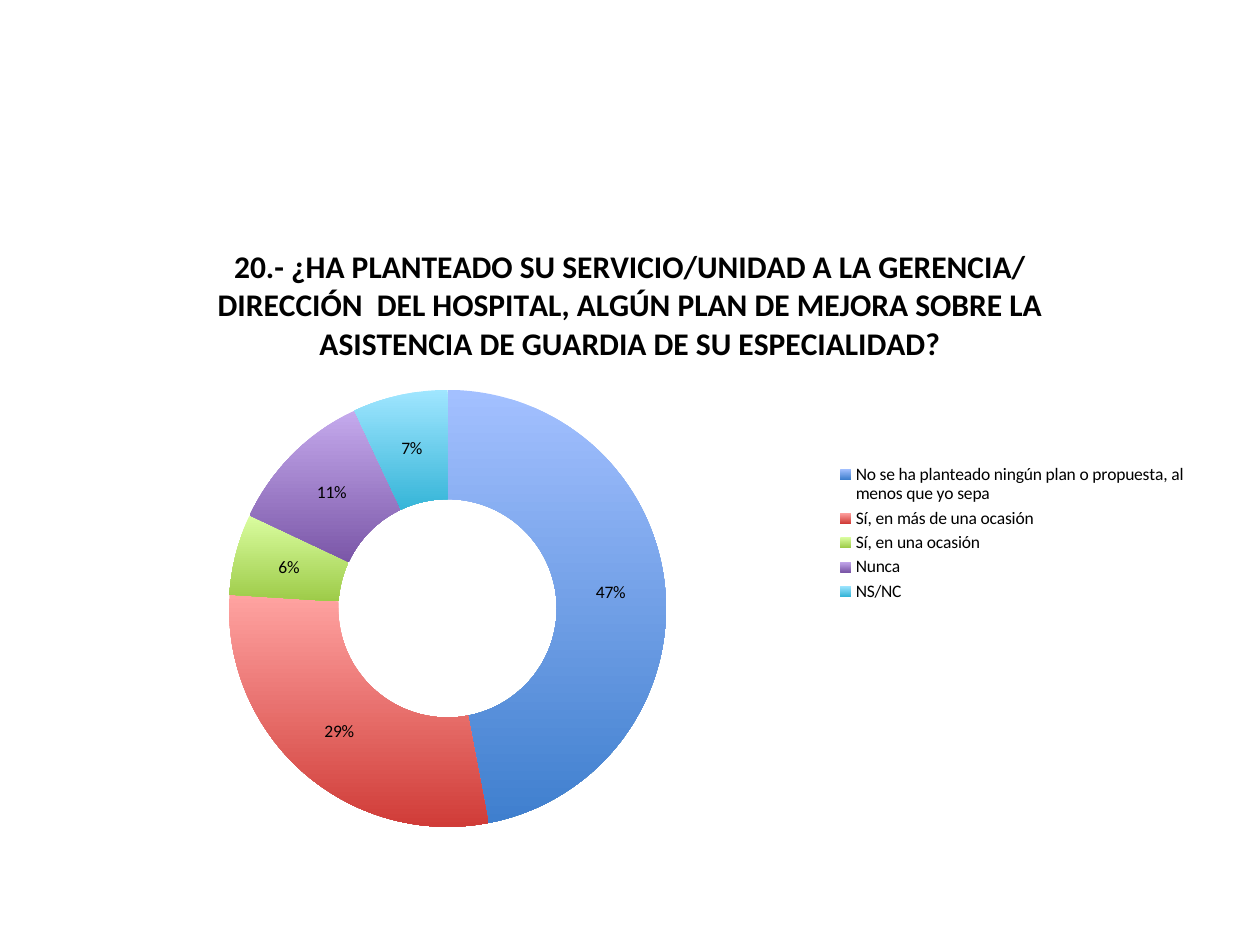
import pptx
import pptx.util
import pptx.dml.color
import pptx.chart.data
import pptx.enum.chart
import pptx.oxml
import pptx.oxml.ns

QUESTION = (
    "20.- ¿HA PLANTEADO SU SERVICIO/UNIDAD A LA GERENCIA/DIRECCIÓN  DEL HOSPITAL, "
    "ALGÚN PLAN DE MEJORA SOBRE LA ASISTENCIA DE GUARDIA DE SU ESPECIALIDAD?"
)
ANSWERS = [
    ("No se ha planteado ningún plan o propuesta, al menos que yo sepa", 47, ("A3C0FF", "3F7FCE")),
    ("Sí, en más de una ocasión", 29, ("FFA3A1", "D03C38")),
    ("Sí, en una ocasión", 6, ("DAFDA0", "9DCB48")),
    ("Nunca", 11, ("C5AAED", "7B57A8")),
    ("NS/NC", 7, ("A0E6FF", "36B5D8")),
]
THEME = {"font": "Calibri", "text": "000000", "title_size": 18, "text_size": 10}

PX = 914400 // 126
SLIDE = (1260, 945)
CHART = (63, 220, 1134, 624)
RING = (229, 390, 437, 437)
LEGEND = (832, 460, 360, 146)


def color(value):
    return pptx.dml.color.RGBColor.from_string(value)


def style(font, size, bold=False):
    font.name = THEME["font"]
    font.size = pptx.util.Pt(size)
    font.bold = bold
    font.color.rgb = color(THEME["text"])


def layout_element(box, inner=False):
    left, top, width, height = box
    fractions = {
        "x": (left - CHART[0]) / CHART[2],
        "y": (top - CHART[1]) / CHART[3],
        "w": width / CHART[2],
        "h": height / CHART[3],
    }
    target = '<c:layoutTarget val="inner"/>' if inner else ""
    modes = '<c:xMode val="edge"/><c:yMode val="edge"/>'
    sizes = "".join(f'<c:{key} val="{value:.4f}"/>' for key, value in fractions.items())
    return pptx.oxml.parse_xml(
        f'<c:layout {pptx.oxml.ns.nsdecls("c")}>'
        f"<c:manualLayout>{target}{modes}{sizes}</c:manualLayout></c:layout>"
    )


def place(parent, layout, position):
    for existing in parent.findall(pptx.oxml.ns.qn("c:layout")):
        parent.remove(existing)
    parent.insert(position, layout)


def main():
    presentation = pptx.Presentation()
    presentation.slide_width, presentation.slide_height = (side * PX for side in SLIDE)
    slide = presentation.slides.add_slide(presentation.slide_layouts[6])

    data = pptx.chart.data.CategoryChartData()
    data.categories = [answer for answer, _, _ in ANSWERS]
    data.add_series(QUESTION, [share for _, share, _ in ANSWERS])
    chart = slide.shapes.add_chart(
        pptx.enum.chart.XL_CHART_TYPE.DOUGHNUT, *(side * PX for side in CHART), data
    ).chart
    style(chart.font, THEME["text_size"])

    chart.has_title = True
    run = chart.chart_title.text_frame.paragraphs[0].add_run()
    run.text = QUESTION
    style(run.font, THEME["title_size"], bold=True)
    chart.chart_title.include_text_in_layout = False

    chart.has_legend = True
    legend = chart.legend
    legend.position = pptx.enum.chart.XL_LEGEND_POSITION.RIGHT
    legend.include_in_layout = False
    style(legend.font, THEME["text_size"])
    legend_element = chart.element.find(".//" + pptx.oxml.ns.qn("c:legend"))
    place(legend_element, layout_element(LEGEND), 1)
    plot_element = chart.element.find(".//" + pptx.oxml.ns.qn("c:plotArea"))
    place(plot_element, layout_element(RING, inner=True), 0)

    plot = chart.plots[0]
    plot.vary_by_categories = True
    plot.has_data_labels = True
    labels = plot.data_labels
    labels.show_percentage = True
    labels.show_value = False
    labels.number_format = "0%"
    labels.number_format_is_linked = False
    style(labels.font, THEME["text_size"])

    for index, (_, _, shades) in enumerate(ANSWERS):
        point_format = plot.series[0].points[index].format
        point_format.line.fill.background()
        point_format.fill.gradient()
        point_format.fill.gradient_angle = 270
        for stop, shade in zip(point_format.fill.gradient_stops, shades):
            stop.color.rgb = color(shade)

    presentation.save("out.pptx")


if __name__ == "__main__":
    main()
